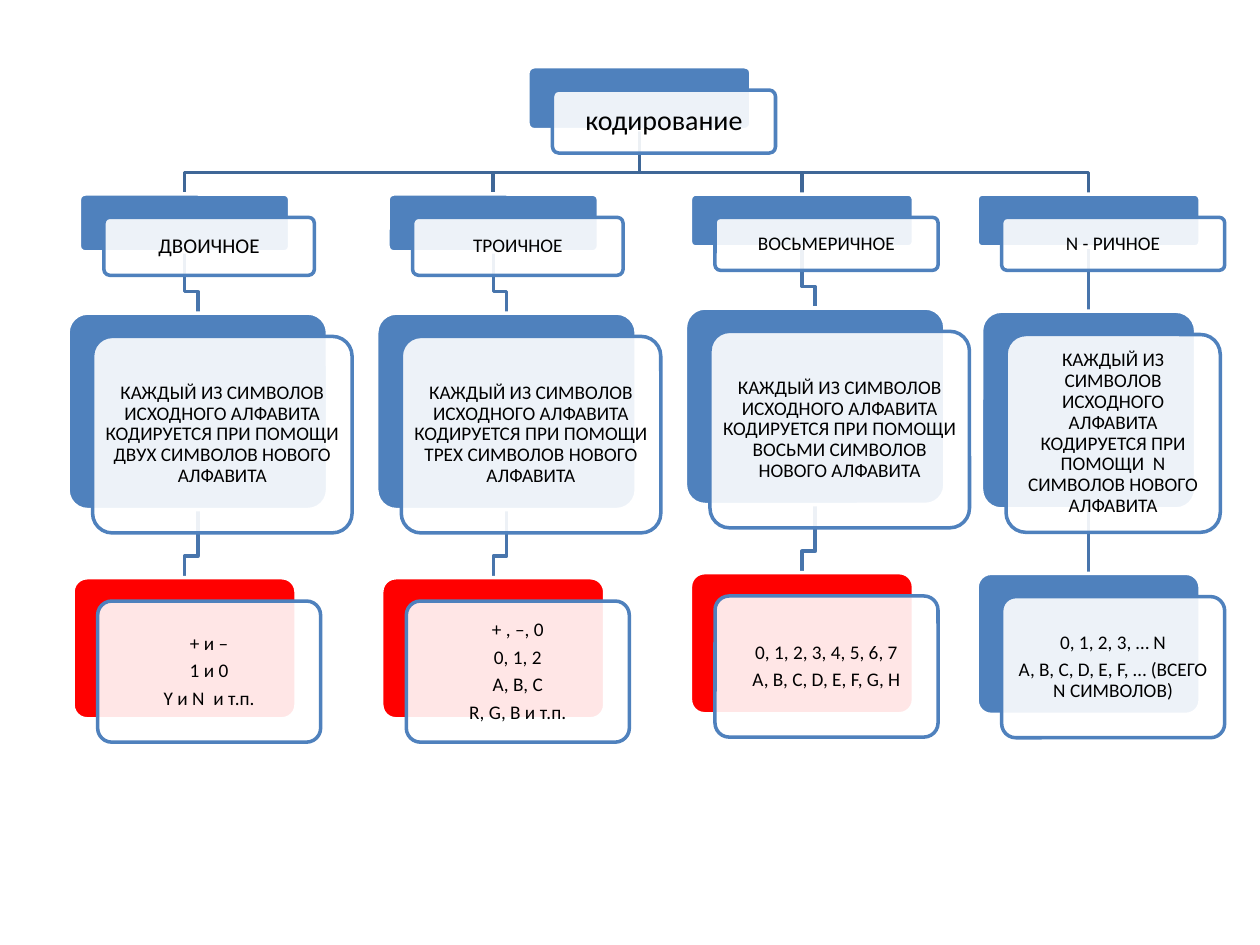
"""Build a slide with a tree of coding types: binary, ternary, octal and N-ary."""
from lxml.etree import SubElement
from pptx import Presentation
from pptx.dml.color import RGBColor as Rgb
from pptx.enum.shapes import MSO_CONNECTOR as Link, MSO_SHAPE as Preset
from pptx.enum.text import MSO_ANCHOR as Anchor, PP_ALIGN as Align
from pptx.oxml.ns import qn
from pptx.util import Inches, Pt

THEME = {
    "blue": Rgb(0x4F, 0x81, 0xBD),
    "red": Rgb(0xFF, 0, 0),
    "white": Rgb(0xFF, 0xFF, 0xFF),
    "black": Rgb(0, 0, 0),
    "trunk": Rgb(0x3F, 0x67, 0x97),
    "branch": Rgb(0x48, 0x75, 0xAC),
    "font": "Calibri",
    "root": 16,
    "lead": 12,
    "body": 11,
    "line": Pt(2),
}
SHIFT_X, SHIFT_Y, ELBOW = 1.95, 1.85, 1.7
MARGINS = ("margin_left", "margin_right", "margin_top", "margin_bottom")
RULE = "КАЖДЫЙ ИЗ СИМВОЛОВ ИСХОДНОГО АЛФАВИТА КОДИРУЕТСЯ ПРИ ПОМОЩИ {} СИМВОЛОВ НОВОГО АЛФАВИТА"

COLUMNS = [
    {"centre": 14.65, "heading": "ДВОИЧНОЕ", "size": "lead", "count": "ДВУХ", "fill": "red",
     "head": (16.7, 4.6), "rule": (20.6, 15.6), "lean": 1.05, "gaps": (4.85, 5.4),
     "examples": ["+ и –", "1 и 0", "Y и N  и т.п."]},
    {"centre": 39.15, "heading": "ТРОИЧНОЕ", "size": "body", "count": "ТРЕХ", "fill": "red",
     "head": (16.7, 4.6), "rule": (20.6, 15.6), "lean": 1.05, "gaps": (4.85, 5.4),
     "examples": ["+ , –, 0", "0, 1, 2", "A, B, C", "R, G, B и т.п."]},
    {"centre": 63.65, "heading": "ВОСЬМЕРИЧНОЕ", "size": "body", "count": "ВОСЬМИ", "fill": "red",
     "head": (17.7, 4.2), "rule": (20.6, 15.6), "lean": 1.05, "gaps": (4.85, 5.4),
     "examples": ["0, 1, 2, 3, 4, 5, 6, 7", "A, B, C, D, E, F, G, H"]},
    {"centre": 86.4, "heading": "N - РИЧНОЕ", "size": "body", "count": " N", "fill": "blue",
     "head": (17.7, 4.2), "rule": (17, 15.7), "lean": 0, "gaps": (5.1, 5.1),
     "examples": ["0, 1, 2, 3, … N", "A, B, C, D, E, F, … (ВСЕГО N СИМВОЛОВ)"]},
]

deck = Presentation()
deck.slide_width, deck.slide_height = Inches(10), Inches(7.5)
CELL = deck.slide_width / 100
page = deck.slides.add_slide(deck.slide_layouts[6])


def cells(*values):
    return [round(value * CELL) for value in values]


def add_box(left, top, width, height, fill, line):
    box = page.shapes.add_shape(Preset.ROUNDED_RECTANGLE, *cells(left, top, width, height))
    box.adjustments[0] = 0.1
    box.shadow.inherit = False
    box.fill.solid()
    box.fill.fore_color.rgb = THEME[fill]
    box.line.color.rgb = THEME[line]
    box.line.width = THEME["line"]
    return box


root = {"centre": 50.75, "top": 5.3, "width": 17.7, "height": 5, "fill": "blue",
        "size": "root", "margin": 0.7, "lines": ["кодирование"]}
cards, links = [root], []
for column in COLUMNS:
    centre, top, parent = column["centre"], 15.4, root
    levels = [
        (column["head"], 0, "blue", column["size"], [column["heading"]], column["gaps"][0]),
        (column["rule"], column["lean"], "blue", "body", [RULE.format(column["count"])], column["gaps"][1]),
        ((17.7, 11.2), 0, column["fill"], "body", column["examples"], 0),
    ]
    for (width, height), lean, fill, size, lines, gap in levels:
        card = {"centre": centre + lean, "top": top, "width": width, "height": height,
                "fill": fill, "size": size, "margin": 0.5, "lines": lines}
        cards.append(card)
        links.append((parent, card))
        parent, top = card, top + height + gap

joins = []
for parent, child in links:
    start_x, start_y = cells(parent["centre"], parent["top"] + parent["height"])
    end_x, bend_y, end_y = cells(child["centre"], child["top"] - ELBOW, child["top"])
    if start_x == end_x:
        link = page.shapes.add_connector(Link.STRAIGHT, start_x, start_y, end_x, end_y)
        SubElement(link.element.spPr, qn("a:effectLst"))
        joins.append((link, parent, child))
    else:
        path = page.shapes.build_freeform(start_x, start_y)
        path.add_line_segments([(start_x, bend_y), (end_x, bend_y), (end_x, end_y)], close=False)
        link = path.convert_to_shape()
        link.fill.background()
        link.shadow.inherit = False
    link.line.color.rgb = THEME["trunk" if parent is root else "branch"]
    link.line.width = THEME["line"]

for card in cards:
    left, top = card["centre"] - card["width"] / 2, card["top"]
    extent = card["width"], card["height"]
    card["box"] = add_box(left, top, *extent, card["fill"], "white")
    front = add_box(left + SHIFT_X, top + SHIFT_Y, *extent, "white", "blue")
    tint = front.element.spPr.find(qn("a:solidFill"))[0]
    SubElement(tint, qn("a:alpha"), val="90000")

    frame = front.text_frame
    margin = cells(card["margin"])[0]
    frame_format = {"word_wrap": True, "vertical_anchor": Anchor.MIDDLE, **dict.fromkeys(MARGINS, margin)}
    for name, value in frame_format.items():
        setattr(frame, name, value)
    size = THEME[card["size"]]
    para_format = {"alignment": Align.CENTER, "line_spacing": 0.9, "space_after": Pt(size * 0.35)}
    font_format = {"name": THEME["font"], "size": Pt(size)}
    for index, line in enumerate(card["lines"]):
        para = frame.add_paragraph() if index else frame.paragraphs[0]
        span = para.add_run()
        span.text = line
        span.font.color.rgb = THEME["black"]
        for target, values in ((para, para_format), (span.font, font_format)):
            for name, value in values.items():
                setattr(target, name, value)

for link, parent, child in joins:
    link.begin_connect(parent["box"], 2)
    link.end_connect(child["box"], 0)

deck.save("out.pptx")
